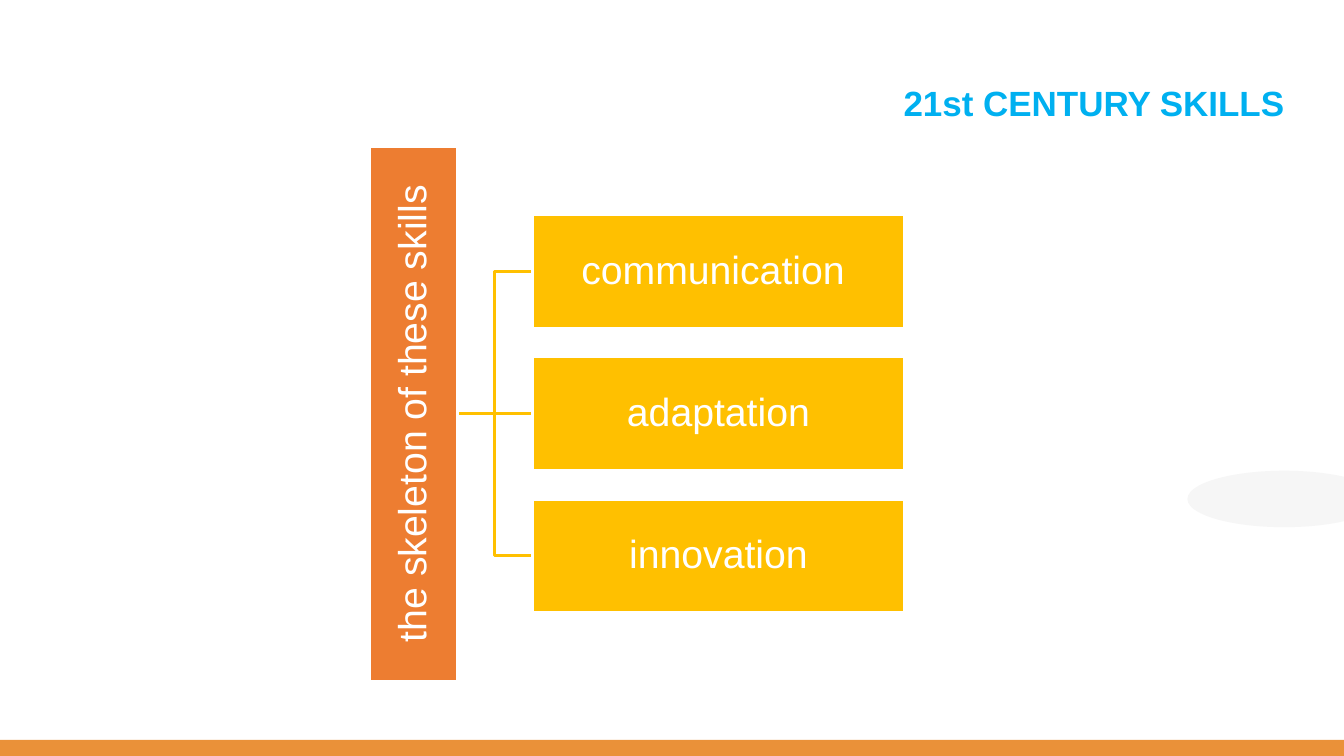
from dataclasses import dataclass

from lxml.etree import SubElement
from pptx import Presentation
from pptx.dml.color import RGBColor
from pptx.enum.shapes import MSO_CONNECTOR, MSO_SHAPE
from pptx.enum.text import MSO_ANCHOR, MSO_AUTO_SIZE, PP_ALIGN
from pptx.oxml.ns import qn
from pptx.util import Inches, Pt


@dataclass(frozen=True)
class Theme:
    """Colours, type sizes and line width of the slide."""
    font: str = "Arial"
    head: str = "00B0F0"
    spine: str = "ED7D31"
    box: str = "FFC000"
    white: str = "FFFFFF"
    oval: str = "F5F5F5"
    bar: str = "EA9139"
    large: int = 28
    small: int = 25
    line: int = 2


class Canvas:
    """Draws on one slide, with lengths in percent of its size."""

    def __init__(self, deck, theme):
        """Add a title-only slide."""
        self.deck = deck
        self.theme = theme
        self.slide = deck.slides.add_slide(deck.slide_layouts[5])
        self.shapes = self.slide.shapes

    def place(self, x, y, w, h):
        """Turn percentages into slide lengths."""
        wide, high = self.deck.slide_width, self.deck.slide_height
        return [round(part * full / 100)
                for part, full in zip((x, y, w, h), (wide, high, wide, high))]

    def letter(self, shape, text, size, color, align, bold=False):
        """Fill a shape with one styled paragraph."""
        frame = shape.text_frame
        frame.text = text
        frame.word_wrap = True
        frame.auto_size = MSO_AUTO_SIZE.NONE
        para = frame.paragraphs[0]
        para.alignment = align
        para.line_spacing = 0.9
        font = para.runs[0].font
        font.name, font.size, font.bold = self.theme.font, Pt(size), bold
        font.color.rgb = RGBColor.from_string(color)
        return frame

    def title(self, text, area):
        """Move and format the title placeholder."""
        shape = self.shapes.title
        shape.left, shape.top, shape.width, shape.height = self.place(*area)
        frame = self.letter(shape, text, self.theme.small, self.theme.head,
                            PP_ALIGN.RIGHT, True)
        frame.vertical_anchor = MSO_ANCHOR.TOP

    def block(self, kind, area, fill, alpha=100):
        """Add a plain filled shape."""
        shape = self.shapes.add_shape(kind, *self.place(*area))
        shape.shadow.inherit = False
        shape.fill.solid()
        shape.fill.fore_color.rgb = RGBColor.from_string(fill)
        shape.line.fill.background()
        if alpha < 100:
            color = shape.element.spPr.find(".//" + qn("a:srgbClr"))
            SubElement(color, qn("a:alpha"), val=str(alpha * 1000))
        return shape

    def label(self, text, area, fill, upright=False):
        """Add a white-edged rectangle with centred text."""
        shape = self.block(MSO_SHAPE.RECTANGLE, area, fill)
        shape.line.color.rgb = RGBColor.from_string(self.theme.white)
        shape.line.width = Pt(self.theme.line)
        frame = self.letter(shape, text, self.theme.large, self.theme.white,
                            PP_ALIGN.CENTER)
        frame.vertical_anchor = MSO_ANCHOR.MIDDLE
        frame.margin_left = frame.margin_right = Inches(0.02)
        frame.margin_top = frame.margin_bottom = Inches(0.02)
        if upright:
            shape.element.txBody.find(qn("a:bodyPr")).set("vert", "vert270")
        return shape

    def join(self, start, end, kind):
        """Link the right side of one shape to the left side of another."""
        link = self.shapes.add_connector(kind, 0, 0, 0, 0)
        link.begin_connect(start, 3)
        link.end_connect(end, 1)
        link.line.color.rgb = RGBColor.from_string(self.theme.box)
        link.line.width = Pt(self.theme.line)
        SubElement(link.element.spPr, qn("a:effectLst"))
        self.shapes.element.insert(2, link.element)


def main():
    """Build the slide and save it."""
    deck = Presentation()
    deck.slide_width, deck.slide_height = Inches(13.33), Inches(7.5)
    theme = Theme()
    page = Canvas(deck, theme)
    page.block(MSO_SHAPE.OVAL, (88.35, 62.27, 14.4, 7.47), theme.oval, 89)
    page.block(MSO_SHAPE.RECTANGLE, (0, 97.87, 100, 2.13), theme.bar)
    page.title("21st CENTURY SKILLS", (25.05, 10.8, 71.25, 12.27))

    mid, tall, high, step = 54.73, 70.8, 15, 18.8
    spine = page.label("the skeleton of these skills",
                       (27.53, mid - tall / 2, 6.5, tall), theme.spine, True)
    skills = ("communication ", "adaptation", "innovation")
    for row, skill in enumerate(skills, -1):
        top = mid - high / 2 + row * step
        box = page.label(skill, (39.6, top, 27.7, high), theme.box)
        page.join(spine, box, MSO_CONNECTOR.ELBOW if row else MSO_CONNECTOR.STRAIGHT)
    deck.save("out.pptx")


if __name__ == "__main__":
    main()
